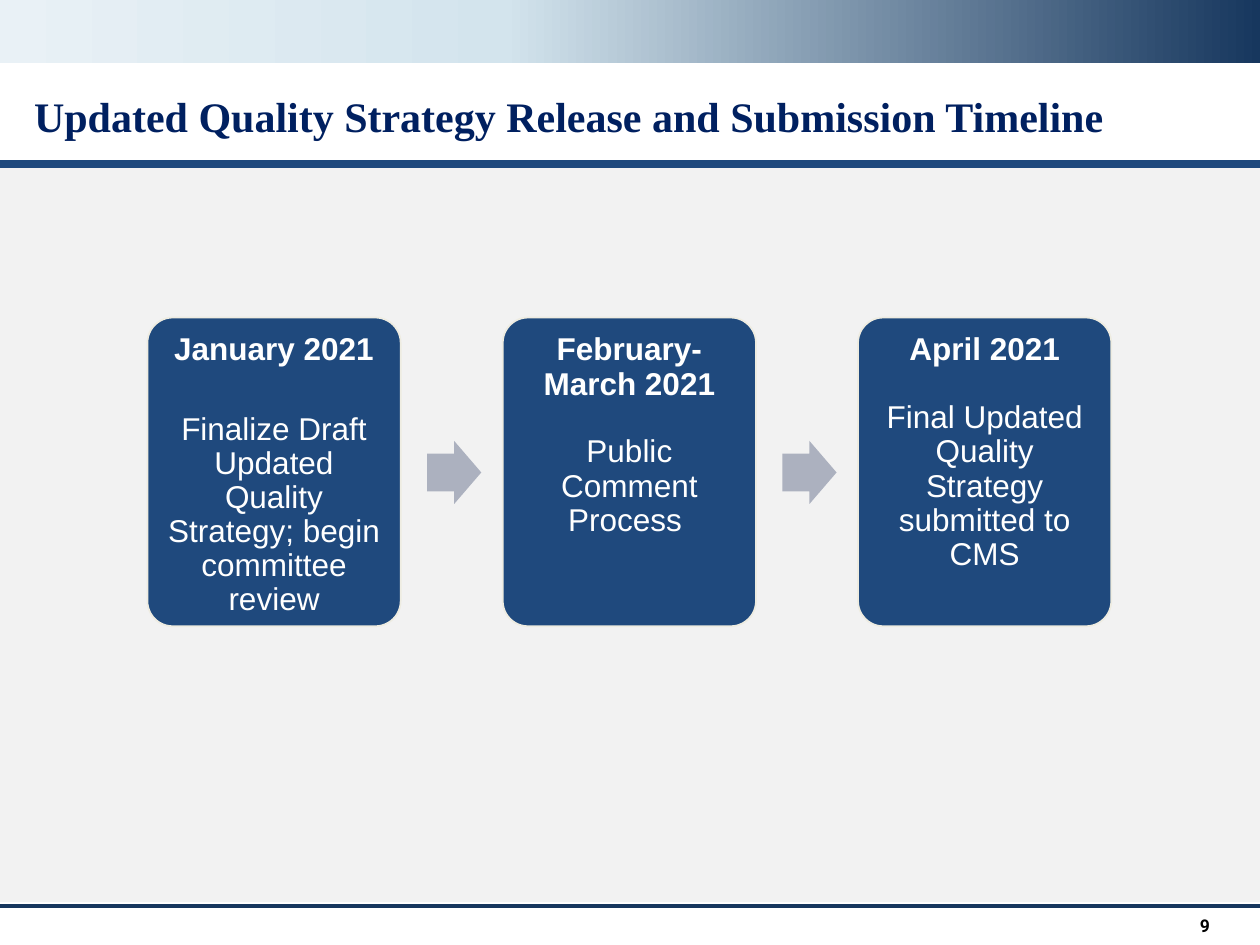
from copy import deepcopy

from pptx import Presentation
from pptx.dml.color import RGBColor
from pptx.enum.shapes import MSO_CONNECTOR as Connector, MSO_SHAPE as Shape
from pptx.enum.text import MSO_ANCHOR as Anchor, MSO_AUTO_SIZE as AutoSize, PP_ALIGN as Align
from pptx.oxml.ns import qn
from pptx.util import Inches, Pt

COLORS = {
    "navy": "17375E", "blue": "1F497D", "title": "002060", "sky": "D3E4ED",
    "mist": "E9F1F6", "panel": "F2F2F2", "arrow": "ACB1BF", "edge": "EEECE1",
    "white": "FFFFFF", "black": "000000",
}

# Heading, gap below it in points, description
STEPS = [
    ("January 2021", 25.7, "Finalize Draft Updated Quality Strategy; begin committee review"),
    ("February-March 2021", 19.4, "Public Comment Process "),
    ("April 2021", 19.4, "Final Updated Quality Strategy submitted to CMS"),
]


def rgb(name):
    return RGBColor.from_string(COLORS[name])


class TimelinePage:
    def __init__(self, deck):
        self.page = deck.slides.add_slide(deck.slide_layouts[5])
        self.shapes = self.page.shapes

    def block(self, kind, left, top, width, height, fill=None, edge=None):
        shape = self.shapes.add_shape(
            kind, Inches(left), Inches(top), Inches(width), Inches(height))
        shape.shadow.inherit = False
        if fill:
            shape.fill.solid()
            shape.fill.fore_color.rgb = rgb(fill)
        if edge:
            shape.line.color.rgb = rgb(edge)
            shape.line.width = Pt(1)
        else:
            shape.line.fill.background()
        return shape

    def gradient_band(self, height, stops):
        band = self.block(Shape.RECTANGLE, 0, 0, 10, height)
        band.fill.gradient()
        band.fill.gradient_angle = 0
        stop_list = band._element.spPr.find(qn("a:gradFill")).find(qn("a:gsLst"))
        stop_list.append(deepcopy(stop_list[-1]))
        for stop, (position, color) in zip(band.fill.gradient_stops, stops):
            stop.position = position
            stop.color.rgb = rgb(color)

    def rule(self, top, color, weight):
        line = self.shapes.add_connector(
            Connector.STRAIGHT, Inches(0), Inches(top), Inches(10), Inches(top))
        line.line.color.rgb = rgb(color)
        line.line.width = Pt(weight)
        line._element.spPr.get_or_add_ln().addnext(
            line._element.spPr.makeelement(qn("a:effectLst"), {}))

    def span(self, para, text, font, size, color, bold):
        span = para.add_run()
        span.text = text
        span.font.name = font
        span.font.size = Pt(size)
        span.font.bold = bold
        span.font.color.rgb = rgb(color)

    def title(self, text):
        box = self.shapes.title
        box.left, box.top = Inches(0.17), Inches(0.71)
        box.width, box.height = Inches(10.5), Inches(0.6)
        frame = box.text_frame
        frame.vertical_anchor = Anchor.TOP
        frame.auto_size = AutoSize.NONE
        para = frame.paragraphs[0]
        para.alignment = Align.LEFT
        para.line_spacing = 0.9
        self.span(para, text, "Times New Roman", 24, "title", True)

    def page_number(self, text):
        box = self.shapes.add_textbox(
            Inches(9.08), Inches(7.19), Inches(0.62), Inches(0.31))
        frame = box.text_frame
        frame.word_wrap = True
        frame.vertical_anchor = Anchor.MIDDLE
        para = frame.paragraphs[0]
        para.alignment = Align.RIGHT
        self.span(para, text, "Roboto", 10, "black", True)

    def card(self, left, heading, gap, description):
        card = self.block(Shape.ROUNDED_RECTANGLE, left, 2.52, 2.01, 2.45, "blue", "edge")
        card.adjustments[0] = 0.1
        frame = card.text_frame
        frame.word_wrap = True
        frame.vertical_anchor = Anchor.TOP
        frame.margin_left = frame.margin_right = Inches(0.07)
        frame.margin_top = frame.margin_bottom = Inches(0.07)
        head, body = frame.paragraphs[0], frame.add_paragraph()
        for para, text, bold in ((head, heading, True), (body, description, False)):
            para.alignment = Align.CENTER
            para.line_spacing = 0.9
            self.span(para, text, "Arial", 18, "white", bold)
        head.space_after = Pt(gap)

    def arrow(self, left):
        arrow = self.block(Shape.RIGHT_ARROW, left, 3.5, 0.43, 0.5, "arrow")
        arrow.adjustments[0] = 0.6
        arrow.adjustments[1] = 0.5


def main():
    deck = Presentation()
    deck.slide_width, deck.slide_height = Inches(10), Inches(7.5)
    page = TimelinePage(deck)

    page.gradient_band(0.5, [(0, "mist"), (0.4, "sky"), (1, "navy")])
    page.rule(7.19, "navy", 2.25)
    page.block(Shape.RECTANGLE, 0, 1.3, 10, 5.86, "panel")
    page.title("Updated Quality Strategy Release and Submission Timeline")
    page.rule(1.3, "blue", 4.5)
    page.page_number("9")

    first_left, pitch, arrow_offset = 1.17, 2.82, 2.22
    for index, step in enumerate(STEPS):
        left = first_left + index * pitch
        page.card(left, *step)
        if index < len(STEPS) - 1:
            page.arrow(left + arrow_offset)

    deck.save("out.pptx")


if __name__ == "__main__":
    main()
